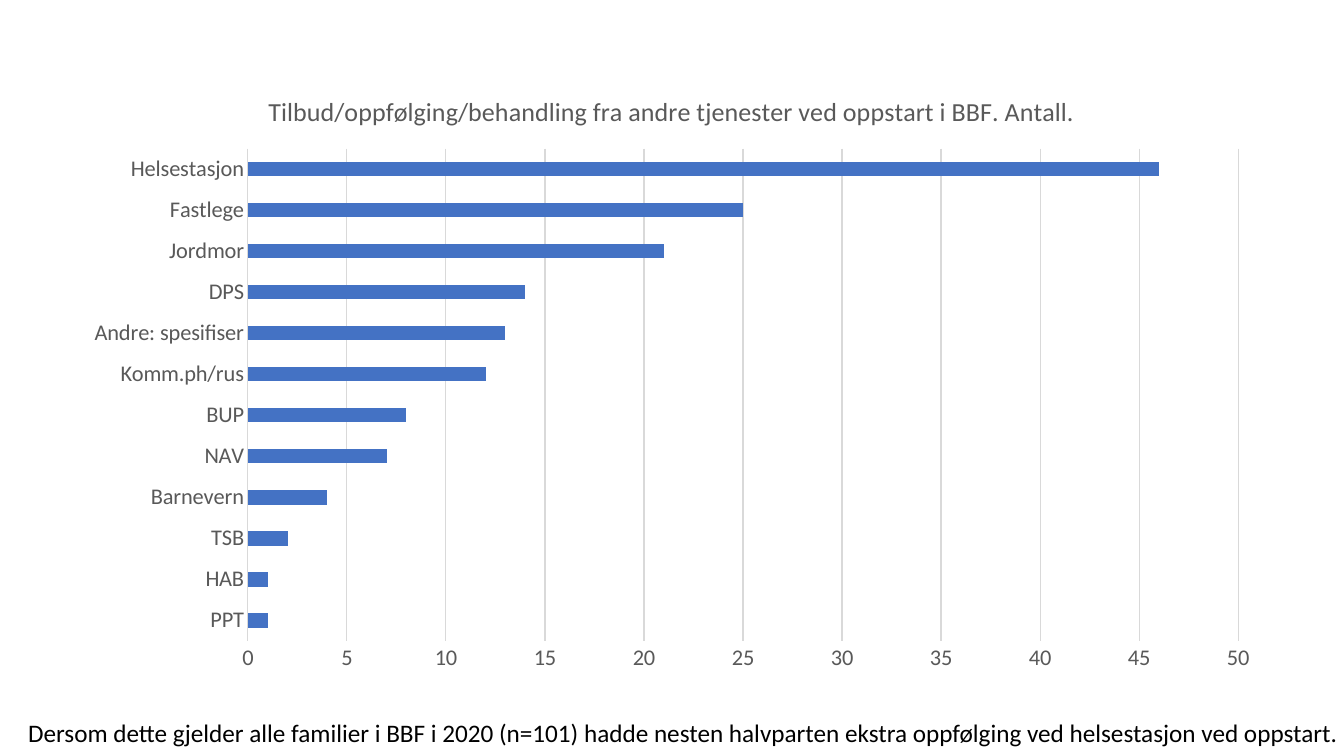
from dataclasses import dataclass

from pptx import Presentation
from pptx.chart import data as chart_data
from pptx.dml.color import RGBColor
from pptx.enum import chart as chart_enum, text as text_enum
from pptx.util import Inches, Pt


@dataclass(frozen=True)
class Theme:
    font: str = "Calibri"
    ink: str = "000000"
    muted: str = "595959"
    rule: str = "D9D9D9"
    bar: str = "4472C4"
    heading_size: float = 18.6
    axis_size: float = 16
    caption_size: float = 18
    rule_width: float = 0.75


THEME = Theme()

HEADING = "Tilbud/oppfølging/behandling fra andre tjenester ved oppstart i BBF. Antall."
CAPTION = (
    "Dersom dette gjelder alle familier i BBF i 2020 (n=101) hadde nesten halvparten "
    "ekstra oppfølging ved helsestasjon ved oppstart."
)
SERVICES = {
    "PPT": 1,
    "HAB": 1,
    "TSB": 2,
    "Barnevern": 4,
    "NAV": 7,
    "BUP": 8,
    "Komm.ph/rus": 12,
    "Andre: spesifiser": 13,
    "DPS": 14,
    "Jordmor": 21,
    "Fastlege": 25,
    "Helsestasjon": 46,
}


def format_font(font, size, color, bold=False):
    font.name = THEME.font
    font.size = Pt(size)
    font.bold = bold
    font.color.rgb = RGBColor.from_string(color)


def write(frame, content, size, color, bold=False, align=None):
    """Put formatted text in the first paragraph of a text frame."""
    paragraph = frame.paragraphs[0]
    paragraph.alignment = align
    run = paragraph.add_run()
    run.text = content
    format_font(run.font, size, color, bold)


def draw_rule(line):
    line.color.rgb = RGBColor.from_string(THEME.rule)
    line.width = Pt(THEME.rule_width)


def format_axis(axis):
    axis.major_tick_mark = axis.minor_tick_mark = chart_enum.XL_TICK_MARK.NONE
    format_font(axis.tick_labels.font, THEME.axis_size, THEME.muted)


def add_services_chart(slide, left, top, width, height):
    counts = chart_data.CategoryChartData()
    counts.categories = list(SERVICES)
    counts.add_series("Series 1", list(SERVICES.values()))
    chart = slide.shapes.add_chart(
        chart_enum.XL_CHART_TYPE.BAR_CLUSTERED, left, top, width, height, counts
    ).chart
    format_font(chart.font, THEME.axis_size, THEME.ink)
    chart.has_legend = False
    write(chart.chart_title.text_frame, HEADING, THEME.heading_size, THEME.muted)
    chart.chart_title.include_in_layout = False

    services, scale = chart.category_axis, chart.value_axis
    format_axis(services)
    services.has_major_gridlines = False
    draw_rule(services.format.line)

    format_axis(scale)
    scale.minimum_scale, scale.maximum_scale, scale.major_unit = 0, 50, 5
    scale.format.line.fill.background()
    scale.has_major_gridlines = True
    draw_rule(scale.major_gridlines.format.line)

    bars = chart.plots[0]
    bars.gap_width = 182
    bars.vary_by_categories = False
    fill = bars.series[0].format.fill
    fill.solid()
    fill.fore_color.rgb = RGBColor.from_string(THEME.bar)


def add_caption(slide, left, top, width, height):
    frame = slide.shapes.add_textbox(left, top, width, height).text_frame
    frame.word_wrap = False
    frame.auto_size = text_enum.MSO_AUTO_SIZE.SHAPE_TO_FIT_TEXT
    write(frame, CAPTION, THEME.caption_size, THEME.ink)


def main():
    deck = Presentation()
    deck.slide_width, deck.slide_height = Inches(13.33), Inches(7.5)
    slide = deck.slides.add_slide(deck.slide_layouts[6])
    add_services_chart(slide, Inches(0.7), Inches(0.7), Inches(11.93), Inches(6.09))
    add_caption(slide, Inches(0.18), Inches(7.07), Inches(13.36), Inches(0.4))
    deck.save("out.pptx")


if __name__ == "__main__":
    main()
